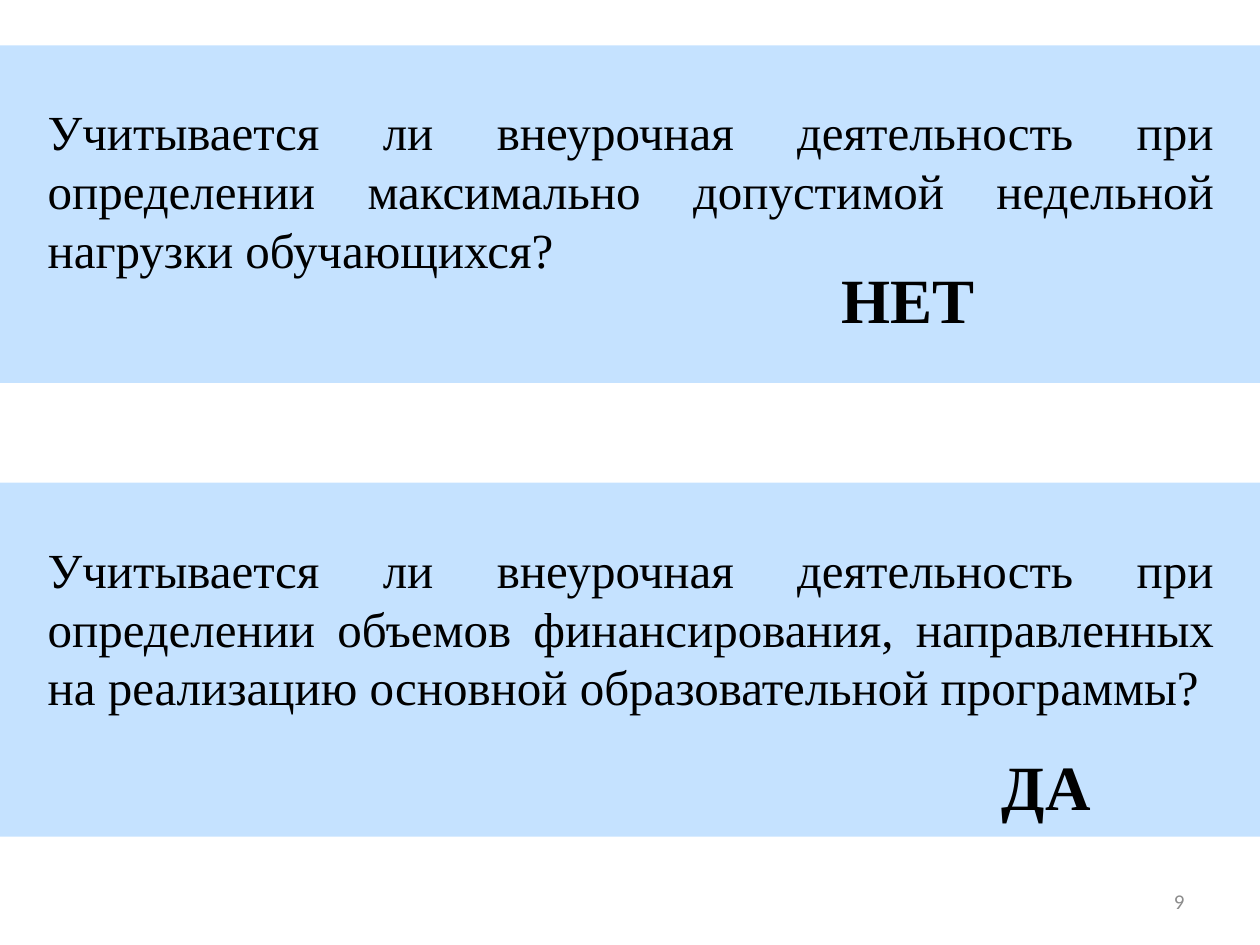
from dataclasses import dataclass

from lxml import etree
from pptx import Presentation
from pptx.dml.color import RGBColor
from pptx.enum.shapes import MSO_SHAPE
from pptx.enum.text import MSO_ANCHOR, PP_ALIGN
from pptx.oxml.ns import qn
from pptx.util import Inches, Pt

RECTANGLE = MSO_SHAPE.RECTANGLE
TOP, MIDDLE = MSO_ANCHOR.TOP, MSO_ANCHOR.MIDDLE
JUSTIFY, CENTER, RIGHT = PP_ALIGN.JUSTIFY, PP_ALIGN.CENTER, PP_ALIGN.RIGHT

SLIDE_WIDTH, SLIDE_HEIGHT = 10, 7.5
BAND_COLOR, BAND_OPACITY = "99CCFF", 56
SERIF = "Times New Roman"
QUESTION_FONT = {"name": SERIF, "size": Pt(28), "bold": False}
ANSWER_FONT = {"name": SERIF, "size": Pt(36), "bold": True}
NUMBER_FONT = {"name": "Calibri", "size": Pt(12), "bold": False}


@dataclass(frozen=True)
class Box:
    left: float
    top: float
    width: float
    height: float

    def lengths(self):
        return [Inches(v) for v in (self.left, self.top, self.width, self.height)]


@dataclass(frozen=True)
class QuestionBlock:
    band: Box
    question: str
    answer: str
    answer_box: Box


BLOCKS = (
    QuestionBlock(
        Box(0, 0.36, SLIDE_WIDTH, 2.68),
        "Учитывается ли внеурочная деятельность при определении "
        "максимально допустимой недельной нагрузки обучающихся?",
        "НЕТ",
        Box(6.42, 2.02, 1.57, 0.71),
    ),
    QuestionBlock(
        Box(0, 3.83, SLIDE_WIDTH, 2.81),
        "Учитывается ли внеурочная деятельность при определении объемов "
        "финансирования, направленных на реализацию основной "
        "образовательной программы?",
        "ДА",
        Box(7.52, 5.88, 1.57, 0.71),
    ),
)


def rgb(color: str) -> RGBColor:
    return RGBColor.from_string(color)


def add_band(slide, box: Box) -> None:
    band = slide.shapes.add_shape(RECTANGLE, *box.lengths())
    band.shadow.inherit = False
    band.line.fill.background()
    band.fill.solid()
    band.fill.fore_color.rgb = rgb(BAND_COLOR)
    color = next(band.fill._xPr.iter(qn("a:srgbClr")))
    etree.SubElement(color, qn("a:alpha"), val=str(BAND_OPACITY * 1000))


def add_text(slide, box: Box, text: str, font: dict, align: PP_ALIGN,
             color: str = "000000", anchor: MSO_ANCHOR = TOP) -> None:
    frame = slide.shapes.add_textbox(*box.lengths()).text_frame
    frame.word_wrap = True
    frame.vertical_anchor = anchor
    paragraph = frame.paragraphs[0]
    paragraph.alignment = align
    run = paragraph.add_run()
    run.text = text
    for attribute, value in font.items():
        setattr(run.font, attribute, value)
    run.font.color.rgb = rgb(color)


def add_block(slide, block: QuestionBlock) -> None:
    add_band(slide, block.band)
    question_box = Box(0.28, block.band.top + 0.4, 9.45, 1.51)
    add_text(slide, question_box, block.question, QUESTION_FONT, JUSTIFY)
    add_text(slide, block.answer_box, block.answer, ANSWER_FONT, CENTER)


def main() -> None:
    presentation = Presentation()
    presentation.slide_width = Inches(SLIDE_WIDTH)
    presentation.slide_height = Inches(SLIDE_HEIGHT)
    blank_layout = presentation.slide_layouts[6]
    slide = presentation.slides.add_slide(blank_layout)
    for block in BLOCKS:
        add_block(slide, block)
    add_text(slide, Box(7.17, 6.95, 2.33, 0.4), "9", NUMBER_FONT, RIGHT,
             color="8C8C8C", anchor=MIDDLE)
    presentation.save("out.pptx")


if __name__ == "__main__":
    main()
